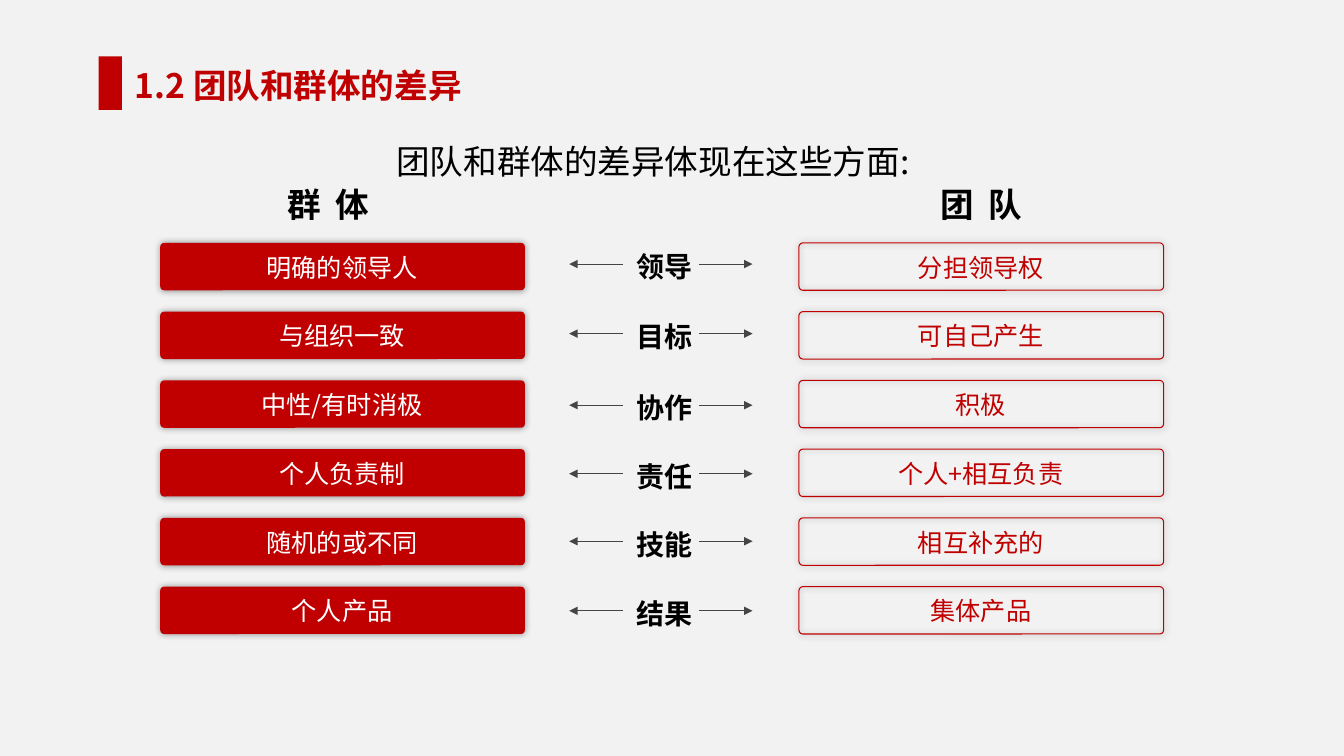
from lxml import etree
from pptx import Presentation
from pptx.dml.color import RGBColor
from pptx.enum.shapes import MSO_CONNECTOR, MSO_SHAPE
from pptx.enum.text import MSO_AUTO_SIZE, PP_ALIGN
from pptx.oxml import parse_xml
from pptx.oxml.ns import nsdecls, qn
from pptx.util import Inches, Pt

RECTANGLE, ROUNDED = MSO_SHAPE.RECTANGLE, MSO_SHAPE.ROUNDED_RECTANGLE
STRAIGHT = MSO_CONNECTOR.STRAIGHT
LEFT, CENTER = PP_ALIGN.LEFT, PP_ALIGN.CENTER
FIT_TEXT = MSO_AUTO_SIZE.SHAPE_TO_FIT_TEXT

RED = RGBColor(0xC0, 0x00, 0x00)
WHITE = RGBColor(0xFF, 0xFF, 0xFF)
BLACK = RGBColor(0x00, 0x00, 0x00)
GRAY = RGBColor(0x45, 0x45, 0x45)
BACKGROUND = RGBColor(0xF2, 0xF2, 0xF2)
FONT = "Noto Sans CJK SC"

GLOW = (
    f'<a:effectLst {nsdecls("a")}><a:outerShdw blurRad="{Pt(5)}" dist="0" dir="0" '
    'algn="ctr" rotWithShape="0"><a:srgbClr val="000000"><a:alpha val="40000"/>'
    "</a:srgbClr></a:outerShdw></a:effectLst>"
)

GROUP_LEFT, TEAM_LEFT = 1.59, 7.93
FIRST_ROW, ROW_STEP = 2.41, 0.682
# Group trait, aspect, team trait, top of the aspect label
ROWS = [
    ("明确的领导人", "领导", "分担领导权", 2.43),
    ("与组织一致", "目标", "可自己产生", 3.12),
    ("中性/有时消极", "协作", "积极", 3.83),
    ("个人负责制", "责任", "个人+相互负责", 4.51),
    ("随机的或不同", "技能", "相互补充的", 5.18),
    ("个人产品", "结果", "集体产品", 5.87),
]


class ComparisonSlide:
    """Holds the current slide and draws its elements in one style."""

    def __init__(self, deck):
        self.page = deck.slides.add_slide(deck.slide_layouts[6])
        fill = self.page.background.fill
        fill.solid()
        fill.fore_color.rgb = BACKGROUND

    def text(self, content, left, top, width, height, size, color=BLACK,
             bold=False, align=CENTER, wrap=True, spacing=0):
        """Add a text box; spacing is extra points after each character."""
        box = self.page.shapes.add_textbox(
            Inches(left), Inches(top), Inches(width), Inches(height))
        frame = box.text_frame
        frame.word_wrap = wrap
        frame.auto_size = FIT_TEXT
        para = frame.paragraphs[0]
        para.alignment = align
        span = para.add_run()
        span.text = content
        span.font.color.rgb = color
        for name, value in {"name": FONT, "size": Pt(size), "bold": bold}.items():
            setattr(span.font, name, value)
        properties = span.font._element
        etree.SubElement(properties, qn("a:ea")).set("typeface", FONT)
        if spacing:
            properties.set("spc", str(round(spacing * 100)))

    def panel(self, kind, left, top, width, height, fill=None, line=None):
        shape = self.page.shapes.add_shape(
            kind, Inches(left), Inches(top), Inches(width), Inches(height))
        shape.shadow.inherit = False
        if fill is None:
            shape.fill.background()
        else:
            shape.fill.solid()
            shape.fill.fore_color.rgb = fill
        if line is None:
            shape.line.fill.background()
        else:
            shape.line.color.rgb = line
            shape.line.width = Pt(0.75)
        return shape

    def trait(self, content, left, top, color, fill=None, line=None):
        """Add a glowing rounded panel with its caption."""
        shape = self.panel(ROUNDED, left, top, 3.62, 0.47, fill, line)
        shape.adjustments[0] = 0.083
        properties = shape._element.spPr
        properties.replace(properties.find(qn("a:effectLst")), parse_xml(GLOW))
        self.text(content, left + 0.46, top + 0.04, 2.69, 0.4, 18, color)

    def arrow(self, start, end, height):
        line = self.page.shapes.add_connector(
            STRAIGHT, Inches(start), Inches(height), Inches(end), Inches(height))
        line.line.color.rgb = GRAY
        line.line.width = Pt(0.75)
        properties = line._element.spPr
        etree.SubElement(properties.find(qn("a:ln")), qn("a:tailEnd")).set(
            "type", "triangle")
        etree.SubElement(properties, qn("a:effectLst"))


def main():
    deck = Presentation()
    deck.slide_width, deck.slide_height = Inches(13.34), Inches(7.5)
    slide = ComparisonSlide(deck)

    slide.text("1.2 团队和群体的差异", 1.24, 0.59, 5.12, 0.5, 24, RED,
               bold=True, align=LEFT)
    slide.panel(RECTANGLE, 0.98, 0.56, 0.23, 0.53, fill=RED)
    slide.text("团队和群体的差异体现在这些方面:", 2.38, 1.35, 8.2, 0.5, 24)
    for heading, left in (("群 体", 2.73), ("团 队", 9.21)):
        slide.text(heading, left, 1.78, 1.06, 0.5, 24, bold=True,
                   wrap=False, spacing=2.7)

    for index, (group, aspect, team, label_top) in enumerate(ROWS):
        top = FIRST_ROW + index * ROW_STEP
        slide.trait(group, GROUP_LEFT, top, WHITE, fill=RED)
        slide.trait(team, TEAM_LEFT, top, RED, line=RED)
        slide.text(aspect, 6.22, label_top, 0.76, 0.43, 20, bold=True, wrap=False)
        for start, end in ((6.94, 7.47), (6.18, 5.65)):
            slide.arrow(start, end, label_top + 0.19)

    deck.save("out.pptx")


if __name__ == "__main__":
    main()
